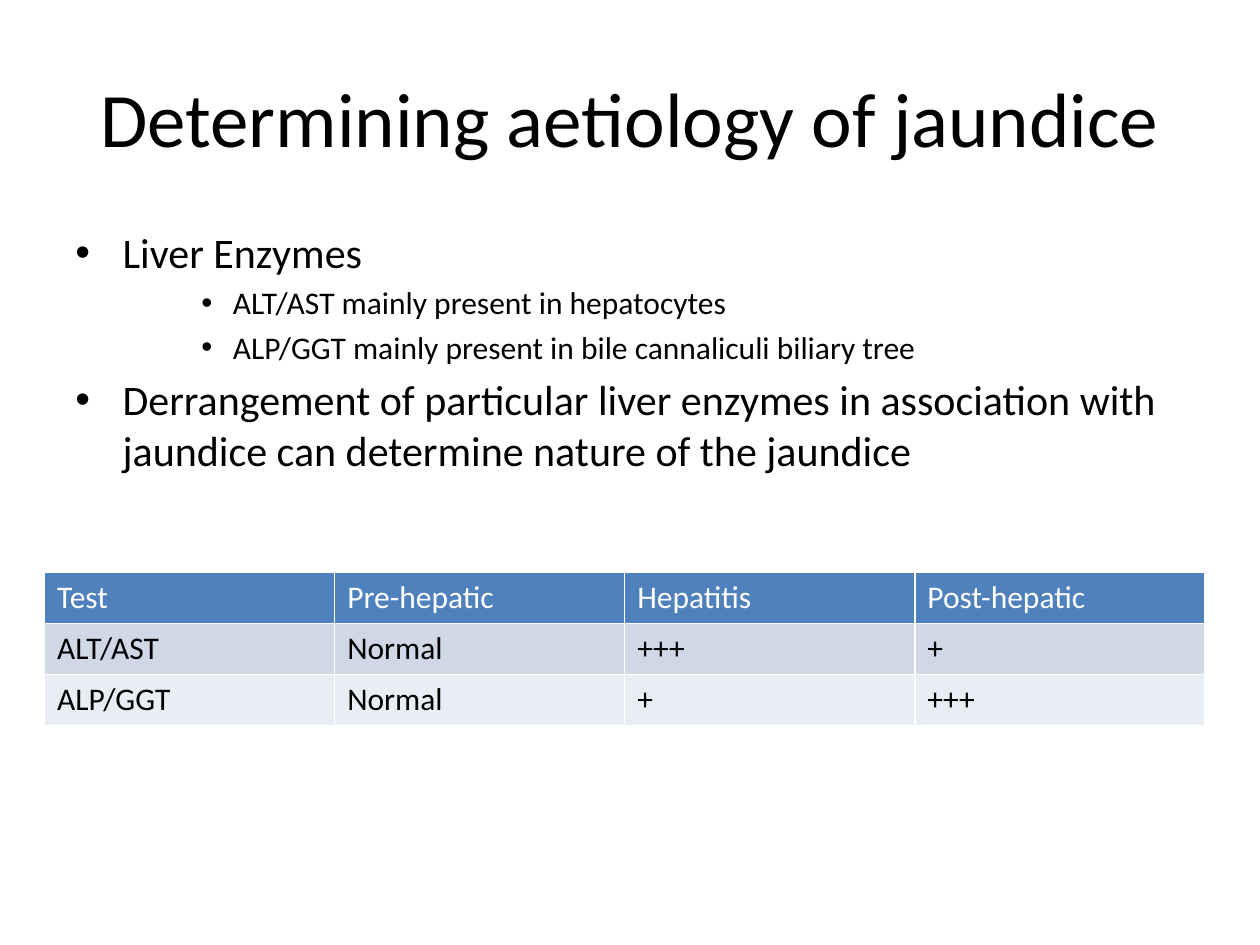
import lxml.etree
import pptx
import pptx.dml.color
import pptx.enum.text
import pptx.oxml.ns
import pptx.util

Pt = pptx.util.Pt
qn = pptx.oxml.ns.qn

BULLETS = [
    ("Liver Enzymes", 24, 27, 27),
    ("ALT/AST mainly present in hepatocytes", 18, 90, 18),
    ("ALP/GGT mainly present in bile cannaliculi biliary tree", 18, 90, 18),
    ("Derrangement of particular liver enzymes in association with "
     "jaundice can determine nature of the jaundice", 24, 27, 27),
]
ENZYME_ROWS = [
    ("Test", "Pre-hepatic", "Hepatitis", "Post-hepatic"),
    ("ALT/AST", "Normal", "+++", "+"),
    ("ALP/GGT", "Normal", "+", "+++"),
]
ROW_FILLS = ["4F81BD", "D0D8E8", "E9EDF4"]


def color(value):
    return pptx.dml.color.RGBColor.from_string(value)


def add_span(para, text, size, shade="000000"):
    span = para.add_run()
    span.text = text
    span.font.name = "Calibri"
    span.font.size = Pt(size)
    span.font.bold = False
    span.font.color.rgb = color(shade)


def add_text_frame(page, left, top, width, height):
    box = page.shapes.add_textbox(Pt(left), Pt(top), Pt(width), Pt(height))
    box.text_frame.word_wrap = True
    return box.text_frame


def add_bullet(para, margin, hanging):
    properties = para._p.get_or_add_pPr()
    properties.set("marL", str(Pt(margin)))
    properties.set("indent", str(-Pt(hanging)))
    lxml.etree.SubElement(properties, qn("a:buFont"), typeface="Arial")
    lxml.etree.SubElement(properties, qn("a:buChar"), char="•")


def add_cell_borders(cell, shade, width):
    properties = cell._tc.get_or_add_tcPr()
    for position, side in enumerate(("lnL", "lnR", "lnT", "lnB")):
        line = lxml.etree.Element(qn("a:" + side), w=str(Pt(width)))
        fill = lxml.etree.SubElement(line, qn("a:solidFill"))
        lxml.etree.SubElement(fill, qn("a:srgbClr"), val=shade)
        properties.insert(position, line)


def add_title(page, left, top, width, height):
    frame = add_text_frame(page, left, top, width, height)
    frame.vertical_anchor = pptx.enum.text.MSO_ANCHOR.MIDDLE
    para = frame.paragraphs[0]
    para.alignment = pptx.enum.text.PP_ALIGN.CENTER
    add_span(para, "Determining aetiology of jaundice", 44)


def add_body(page, left, top, width, height):
    frame = add_text_frame(page, left, top, width, height)
    for index, (text, size, margin, hanging) in enumerate(BULLETS):
        para = frame.add_paragraph() if index else frame.paragraphs[0]
        para.space_before = Pt(0.2 * size if index else 0)
        add_bullet(para, margin, hanging)
        add_span(para, text, size)


def add_enzyme_table(page, left, top, width, height):
    table = page.shapes.add_table(
        len(ENZYME_ROWS), len(ENZYME_ROWS[0]),
        Pt(left), Pt(top), Pt(width), Pt(height)).table
    for row, (texts, fill) in enumerate(zip(ENZYME_ROWS, ROW_FILLS)):
        for column, text in enumerate(texts):
            cell = table.cell(row, column)
            cell.fill.solid()
            cell.fill.fore_color.rgb = color(fill)
            add_cell_borders(cell, "FFFFFF", 1)
            shade = "000000" if row else "FFFFFF"
            add_span(cell.text_frame.paragraphs[0], text, 18, shade)


def main():
    deck = pptx.Presentation()
    deck.slide_width, deck.slide_height = Pt(720), Pt(540)
    page = deck.slides.add_slide(deck.slide_layouts[6])
    add_body(page, 36, 126, 648, 356.4)
    add_title(page, 36, 21.6, 648, 90)
    add_enzyme_table(page, 25.5, 327, 663, 87.6)
    deck.save("out.pptx")


if __name__ == "__main__":
    main()
